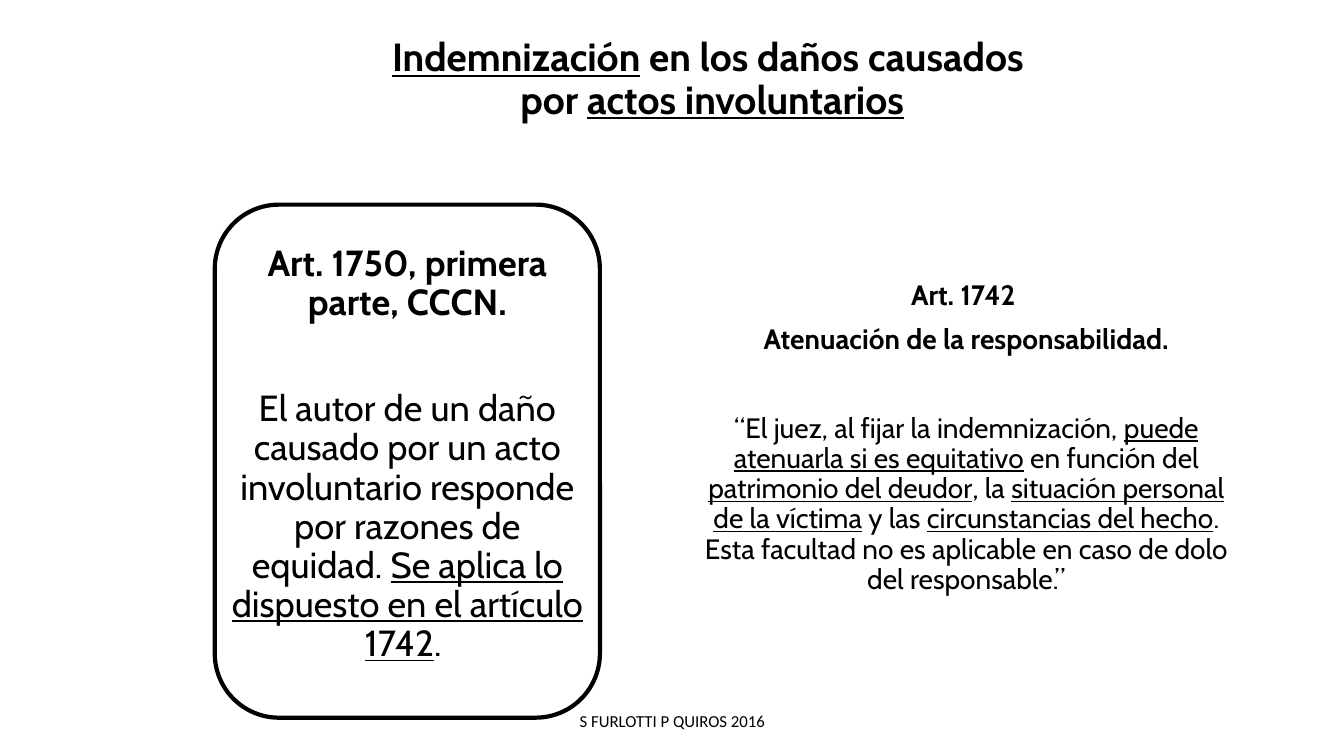
from lxml import etree
from pptx import Presentation
from pptx.dml.color import RGBColor
from pptx.enum.shapes import MSO_SHAPE
from pptx.enum.text import MSO_ANCHOR, MSO_AUTO_SIZE, PP_ALIGN
from pptx.oxml.ns import qn
from pptx.util import Inches, Pt

CENTER = PP_ALIGN.CENTER
TOP, MIDDLE = MSO_ANCHOR.TOP, MSO_ANCHOR.MIDDLE
NO_FIT = MSO_AUTO_SIZE.NONE
ROUNDED = MSO_SHAPE.ROUNDED_RECTANGLE
BLACK, WHITE = "000000", "FFFFFF"


def color(value):
    return RGBColor.from_string(value)


def write(box, paragraphs, place, size, font="Cabin", anchor=TOP, line=0.9):
    box.left, box.top, box.width, box.height = map(Inches, place)
    frame = box.text_frame
    frame.word_wrap = True
    frame.auto_size = NO_FIT
    frame.vertical_anchor = anchor
    for number, (text, bold, before) in enumerate(paragraphs):
        para = frame.add_paragraph() if number else frame.paragraphs[0]
        para.alignment = CENTER
        para.line_spacing = line
        para.space_before = Pt(before)
        para.space_after = Pt(0)
        properties = para._p.get_or_add_pPr()
        properties.set("marL", "0")
        properties.set("indent", "0")
        etree.SubElement(properties, qn("a:buNone"))
        for row, words in enumerate(text.split("\n")):
            if row:
                para.add_line_break()
            for order, piece in enumerate(words.split("_")):
                if piece:
                    span = para.add_run()
                    span.text = piece
                    span.font.name = font
                    span.font.size = Pt(size)
                    span.font.bold = bold
                    span.font.underline = order % 2 == 1
                    span.font.color.rgb = color(BLACK)


deck = Presentation()
deck.slide_width, deck.slide_height = Inches(13.33), Inches(7.5)
page = deck.slides.add_slide(deck.slide_layouts[3])
page.background.fill.solid()
page.background.fill.fore_color.rgb = color(WHITE)
title, article, attenuation = list(page.placeholders)[:3]
for extra in list(page.placeholders)[3:]:
    extra.element.getparent().remove(extra.element)

card_left, card_width = 2.13, 3.82

write(title, [
    ("_Indemnización_ en los daños causados\n por _actos involuntarios_", True, 0),
], (1.96, 0.17, 10.12, 1.25), 28, anchor=MIDDLE)

write(article, [
    ("Art. 1750, primera parte, CCCN.", True, 10),
    ("El autor de un daño causado por un acto involuntario responde por razones "
     "de equidad. _Se aplica lo dispuesto en el artículo 1742_. ", False, 48),
], (card_left, 2.38, card_width, 4.32), 25.9)

attenuation.fill.solid()
attenuation.fill.fore_color.rgb = color(WHITE)
write(attenuation, [
    ("Art. 1742 ", True, 10),
    ("Atenuación de la responsabilidad.", True, 10),
    ("“El juez, al fijar la indemnización, _puede atenuarla si es equitativo_ "
     "en función del _patrimonio del deudor_, la _situación personal de la "
     "víctima_ y las _circunstancias del hecho_. Esta facultad no es aplicable "
     "en caso de dolo del responsable.”", False, 41.5),
], (6.75, 2.74, 5.67, 4.03), 20)

card = page.shapes.add_shape(
    ROUNDED, Inches(card_left), Inches(2.03), Inches(card_width), Inches(5.09))
card.shadow.inherit = False
card.fill.background()
card.line.color.rgb = color(BLACK)
card.line.width = Pt(3)

footer = page.shapes.add_textbox(0, 0, 0, 0)
write(footer, [("S FURLOTTI P QUIROS 2016", False, 0)],
      (4.42, 6.95, 4.5, 0.4), 12, font="Calibri", anchor=MIDDLE, line=1.0)

deck.save("out.pptx")
